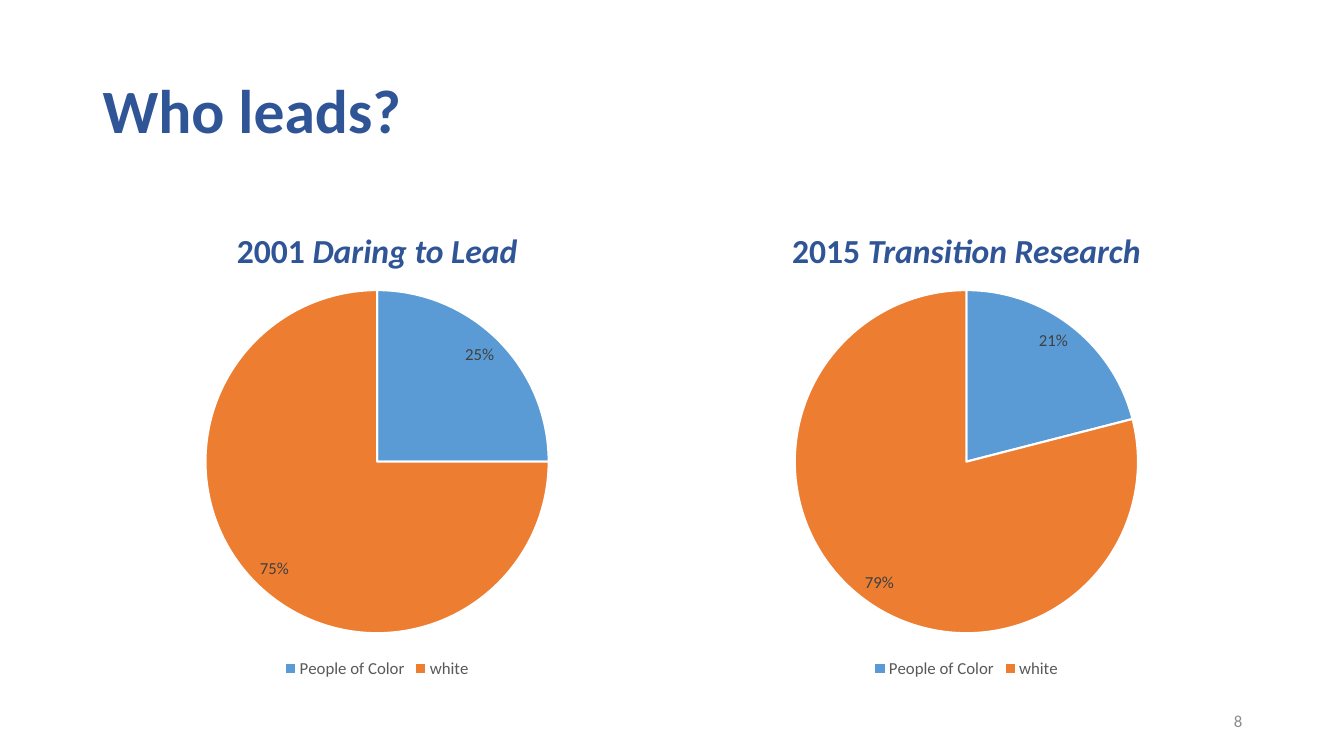
import pptx
import pptx.chart.data
import pptx.dml.color
import pptx.enum.chart
import pptx.enum.text
import pptx.util

Inches = pptx.util.Inches
Pt = pptx.util.Pt
Align = pptx.enum.text.PP_ALIGN
Anchor = pptx.enum.text.MSO_ANCHOR


def color(value):
    return pptx.dml.color.RGBColor.from_string(value)


class Page:
    """Holds the style and the slide that is being filled."""

    FONT = "Calibri"
    HEADING = "2F5597"
    NUMBER = "8C8C8C"
    LABEL = "404040"
    LEGEND = "595959"
    SLICES = {"People of Color": "5B9BD5", "white": "ED7D31"}

    def __init__(self, deck):
        self.slide = deck.slides.add_slide(deck.slide_layouts[6])

    def style(self, font, size, hue):
        font.name = self.FONT
        font.size = Pt(size)
        font.color.rgb = color(hue)

    def text(self, area, spans, size, hue, align=Align.LEFT,
             anchor=Anchor.MIDDLE, bold=True, line_spacing=0.9):
        """Add one paragraph; spans are pairs of wording and italic."""
        box = self.slide.shapes.add_textbox(*map(Inches, area))
        frame = box.text_frame
        frame.word_wrap = True
        frame.vertical_anchor = anchor
        para = frame.paragraphs[0]
        para.alignment = align
        para.line_spacing = line_spacing
        for wording, italic in spans:
            span = para.add_run()
            span.text = wording
            self.style(span.font, size, hue)
            span.font.bold = bold
            span.font.italic = italic

    def pie(self, area, shares):
        data = pptx.chart.data.CategoryChartData(number_format="0%")
        data.categories = list(self.SLICES)
        data.add_series("Series 1", shares)
        chart = self.slide.shapes.add_chart(
            pptx.enum.chart.XL_CHART_TYPE.PIE, *map(Inches, area), data).chart
        chart.has_title = False
        self.style(chart.font, 10, "000000")

        chart.has_legend = True
        chart.legend.position = pptx.enum.chart.XL_LEGEND_POSITION.BOTTOM
        chart.legend.include_in_layout = False
        self.style(chart.legend.font, 12, self.LEGEND)

        plot = chart.plots[0]
        plot.vary_by_categories = True
        series = plot.series[0]
        for index, hue in enumerate(self.SLICES.values()):
            look = series.points[index].format
            look.fill.solid()
            look.fill.fore_color.rgb = color(hue)
            look.line.color.rgb = color("FFFFFF")
            look.line.width = Pt(1.5)

        labels = series.data_labels
        labels.show_value = True
        labels.number_format = "0%"
        labels.number_format_is_linked = False
        labels.position = pptx.enum.chart.XL_LABEL_POSITION.INSIDE_END
        self.style(labels.font, 12, self.LABEL)


def main():
    deck = pptx.Presentation()
    deck.slide_width = Inches(13.33)
    deck.slide_height = Inches(7.5)
    page = Page(deck)

    page.text((0.92, 0.4, 11.5, 1.45), [("Who leads?", False)], 44, page.HEADING)
    studies = [
        (0.92, 5.64, "2001 ", "Daring to Lead", (0.25, 0.75)),
        (6.75, 5.67, "2015 ", "Transition Research", (0.21, 0.79)),
    ]
    for left, width, year, study, shares in studies:
        page.text((left, 1.84, width, 0.9), [(year, False), (study, True)],
                  24, page.HEADING, Align.CENTER, Anchor.BOTTOM)
        page.pie((left, 2.74, width, 4.03), shares)
    page.text((9.42, 6.95, 3, 0.4), [("8", False)], 12, page.NUMBER,
              Align.RIGHT, bold=False, line_spacing=1.0)

    deck.save("out.pptx")


if __name__ == "__main__":
    main()
